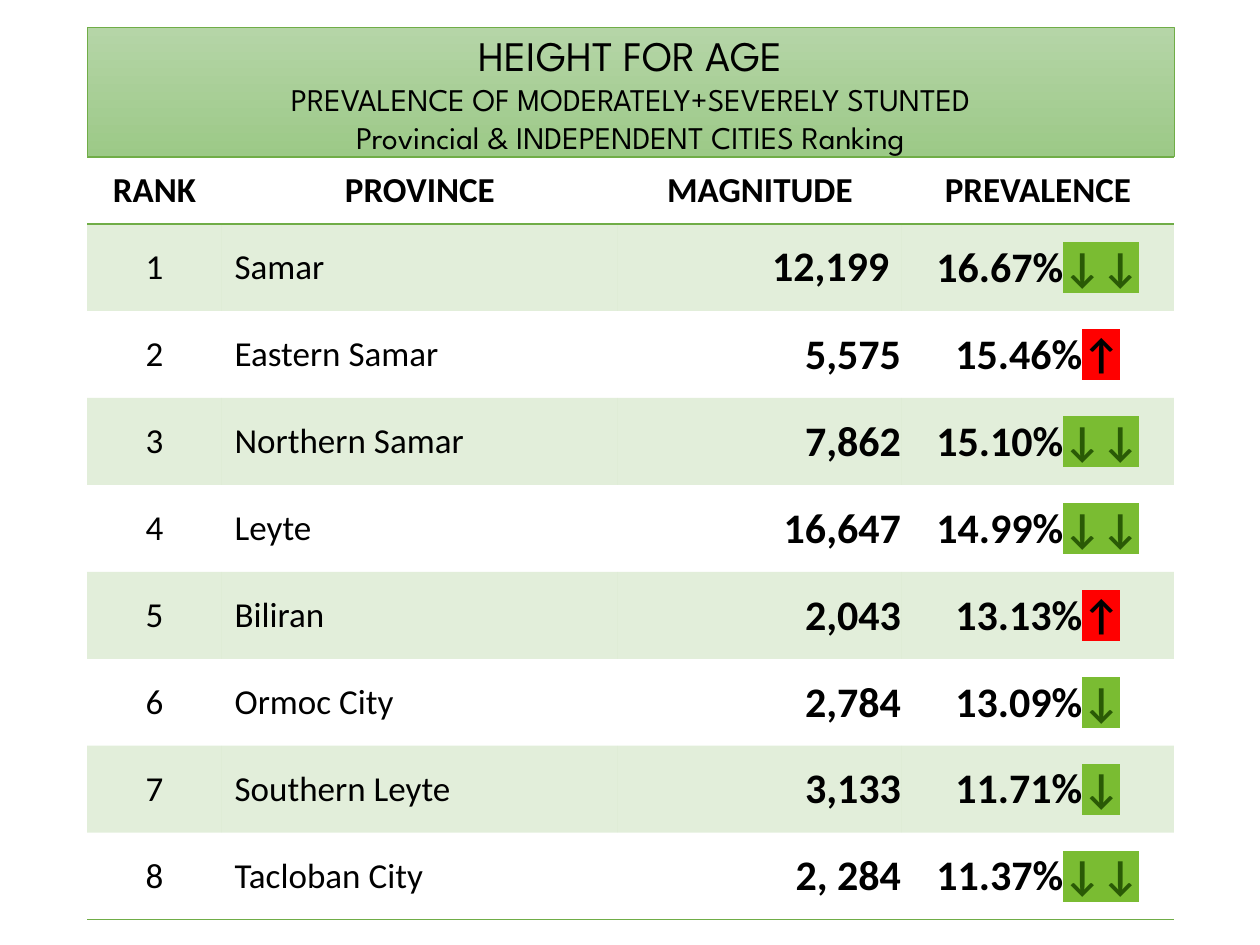
from lxml import etree
from pptx import Presentation
from pptx.dml.color import RGBColor
from pptx.enum.shapes import MSO_SHAPE
from pptx.enum.text import MSO_ANCHOR, PP_ALIGN
from pptx.oxml.ns import qn
from pptx.util import Emu, Pt

PX = 914400 / 126
LEFT, CENTER, RIGHT = PP_ALIGN.LEFT, PP_ALIGN.CENTER, PP_ALIGN.RIGHT
MIDDLE = MSO_ANCHOR.MIDDLE
RECTANGLE = MSO_SHAPE.RECTANGLE

BLACK = RGBColor(0x00, 0x00, 0x00)
GREEN = RGBColor(0x70, 0xAD, 0x47)
BANNER_TOP = RGBColor(0xB5, 0xD5, 0xA7)
BANNER_BOTTOM = RGBColor(0x9C, 0xC9, 0x87)
DARK_GREEN = RGBColor(0x2A, 0x5A, 0x06)
LIME = RGBColor(0x7A, 0xBC, 0x32)
RED = RGBColor(0xFF, 0x00, 0x00)

NO_STYLE = "{2D5ABB26-0587-4C30-8999-92F81FD0307C}"
TABLE_LEFT, TABLE_TOP = 87, 157
COLUMN_WIDTHS = [135, 396, 284, 272]
HEADER_HEIGHT, ROW_HEIGHT = 67, 87
TABLE_WIDTH = sum(COLUMN_WIDTHS)

HEADINGS = ["RANK", "PROVINCE", "MAGNITUDE", "PREVALENCE"]
PROVINCES = [
    ("Samar", "12,199", "16.67%", "↓↓"),
    ("Eastern Samar", "5,575", "15.46%", "↑"),
    ("Northern Samar", "7,862", "15.10%", "↓↓"),
    ("Leyte", "16,647", "14.99%", "↓↓"),
    ("Biliran", "2,043", "13.13%", "↑"),
    ("Ormoc City", "2,784", "13.09%", "↓"),
    ("Southern Leyte", "3,133", "11.71%", "↓"),
    ("Tacloban City", "2, 284", "11.37%", "↓↓"),
]


def px(length):
    return Emu(round(length * PX))


def add_text(paragraph, text, size=20, bold=False, align=CENTER,
             font="Calibri", color=BLACK, highlight=None):
    """Append one formatted run to the paragraph."""
    paragraph.alignment = align
    run = paragraph.add_run()
    run.text = text
    run.font.size = Pt(size)
    run.font.bold = bold
    run.font.name = font
    run.font.color.rgb = color
    if highlight is not None:
        mark = etree.Element(qn("a:highlight"))
        etree.SubElement(mark, qn("a:srgbClr"), val=str(highlight))
        run.font._element.find(qn("a:solidFill")).addnext(mark)


presentation = Presentation()
presentation.slide_width = px(1260)
presentation.slide_height = px(945)
slide = presentation.slides.add_slide(presentation.slide_layouts[6])

# Ranking table
table_height = HEADER_HEIGHT + ROW_HEIGHT * len(PROVINCES)
frame = slide.shapes.add_table(len(PROVINCES) + 1, len(HEADINGS), px(TABLE_LEFT),
                               px(TABLE_TOP), px(TABLE_WIDTH), px(table_height))
table = frame.table
table.first_row = True
table.horz_banding = False
table._tbl.tblPr.find(qn("a:tableStyleId")).text = NO_STYLE
for column, width in zip(table.columns, COLUMN_WIDTHS):
    column.width = px(width)
for index, row in enumerate(table.rows):
    row.height = px(ROW_HEIGHT if index else HEADER_HEIGHT)

for column, heading in enumerate(HEADINGS):
    add_text(table.cell(0, column).text_frame.paragraphs[0], heading, bold=True)

for rank, (province, magnitude, prevalence, arrows) in enumerate(PROVINCES, start=1):
    cells = [table.cell(rank, column) for column in range(len(HEADINGS))]
    paragraphs = [cell.text_frame.paragraphs[0] for cell in cells]
    add_text(paragraphs[0], str(rank))
    add_text(paragraphs[1], province, align=LEFT)
    add_text(paragraphs[2], magnitude, size=24, bold=True, align=RIGHT)
    add_text(paragraphs[3], prevalence, size=24, bold=True)
    rising = "↑" in arrows
    add_text(paragraphs[3], arrows, size=24, bold=True,
             color=BLACK if rising else DARK_GREEN, highlight=RED if rising else LIME)
    # The first magnitude keeps the default margin
    for cell in cells[3:] if rank == 1 else cells[2:]:
        cell.margin_left = cell.margin_right = cell.margin_top = px(1)
        cell.margin_bottom = 0

# Banding on odd rows, rules around the header and under the last row
borders = {0: ["a:lnT", "a:lnB"], len(PROVINCES): ["a:lnB"]}
for index in range(len(PROVINCES) + 1):
    for column in range(len(HEADINGS)):
        cell = table.cell(index, column)
        cell.vertical_anchor = MIDDLE
        properties = cell._tc.get_or_add_tcPr()
        if index % 2:
            cell.fill.solid()
            cell.fill.fore_color.rgb = GREEN
            tint = properties.find(qn("a:solidFill")).find(qn("a:srgbClr"))
            etree.SubElement(tint, qn("a:alpha"), val="20000")
        else:
            cell.fill.background()
        for position, side in enumerate(borders.get(index, [])):
            line = etree.Element(qn(side), w=str(Pt(1)))
            fill = etree.SubElement(line, qn("a:solidFill"))
            etree.SubElement(fill, qn("a:srgbClr"), val=str(GREEN))
            properties.insert(position, line)

# Title banner
banner = slide.shapes.add_shape(RECTANGLE, px(TABLE_LEFT), px(28),
                                px(TABLE_WIDTH), px(129))
banner.shadow.inherit = False
banner.fill.gradient()
banner.fill.gradient_angle = 270
for stop, color in zip(banner.fill.gradient_stops, [BANNER_TOP, BANNER_BOTTOM]):
    stop.color.rgb = color
banner.line.color.rgb = GREEN
banner.line.width = Pt(0.5)

title = banner.text_frame
title.word_wrap = True
title.vertical_anchor = MIDDLE
add_text(title.paragraphs[0], "HEIGHT FOR AGE", size=24, font="League Spartan")
for subtitle in ["PREVALENCE OF MODERATELY+SEVERELY STUNTED",
                 "Provincial & INDEPENDENT CITIES Ranking"]:
    add_text(title.add_paragraph(), subtitle, size=18, font="League Spartan")

presentation.save("out.pptx")
